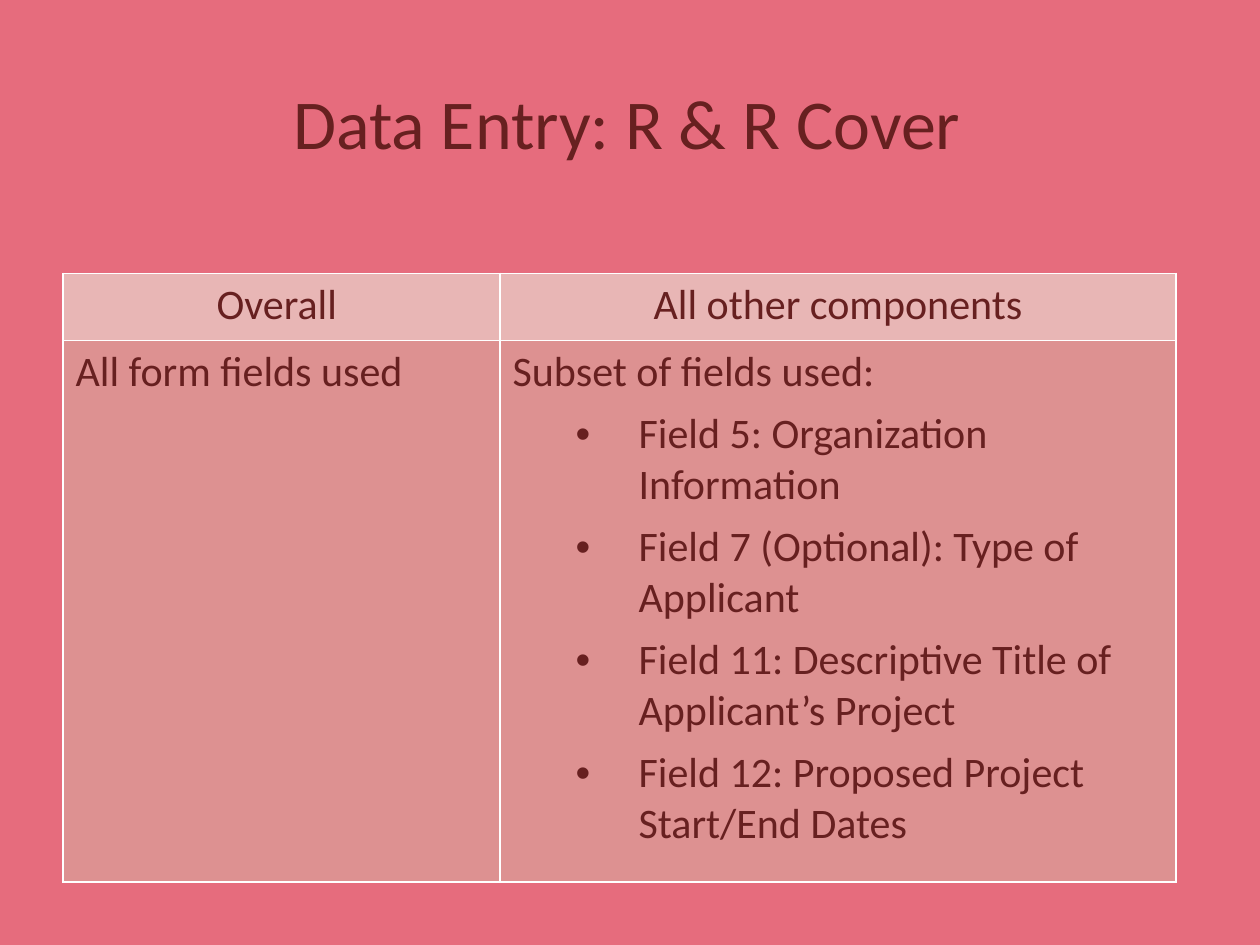
from dataclasses import dataclass

from lxml.etree import SubElement
from pptx import Presentation
from pptx.dml.color import RGBColor
from pptx.enum.text import MSO_AUTO_SIZE as AutoSize, PP_ALIGN as Align
from pptx.oxml.ns import qn
from pptx.slide import Slide
from pptx.table import _Cell as Cell
from pptx.text.text import _Paragraph as Paragraph
from pptx.util import Cm, Pt

COLORS = {
    "background": "E66C7D",
    "text": "672020",
    "header": "E8B6B5",
    "body": "DD9191",
    "border": "FFFFFF",
}
FONT = "Calibri"
COLUMN_WIDTHS = (8.81, 13.63)
ROW_HEIGHTS = (1.35, 10.92)


@dataclass
class Line:
    text: str
    align: Align = Align.LEFT
    space_after: int = 0
    bulleted: bool = False


@dataclass
class CellContent:
    lines: list[Line]
    fill: str


def color(name: str) -> RGBColor:
    return RGBColor.from_string(COLORS[name])


def write_line(paragraph: Paragraph, line: Line, size: int) -> None:
    paragraph.text = line.text
    paragraph.alignment = line.align
    paragraph.space_after = Pt(line.space_after)
    if line.bulleted:
        properties = paragraph._p.get_or_add_pPr()
        properties.set("marL", str(Cm(2.54)))
        properties.set("indent", str(Cm(-1.27)))
        SubElement(properties, qn("a:buFont"), typeface="Arial")
        SubElement(properties, qn("a:buChar"), char="•")
    for run in paragraph.runs:
        run.font.name = FONT
        run.font.size = Pt(size)
        run.font.color.rgb = color("text")


def draw_borders(cell: Cell) -> None:
    properties = cell._tc.get_or_add_tcPr()
    for side in ("lnL", "lnR", "lnT", "lnB"):
        border = SubElement(properties, qn(f"a:{side}"), w=str(Pt(1)))
        fill = SubElement(border, qn("a:solidFill"))
        SubElement(fill, qn("a:srgbClr"), val=COLORS["border"])


def fill_cell(cell: Cell, content: CellContent) -> None:
    draw_borders(cell)
    cell.fill.solid()
    cell.fill.fore_color.rgb = color(content.fill)
    text_frame = cell.text_frame
    for index, line in enumerate(content.lines):
        paragraph = text_frame.add_paragraph() if index else text_frame.paragraphs[0]
        write_line(paragraph, line, 24)


def add_title(slide: Slide, text: str) -> None:
    text_box = slide.shapes.add_textbox(Cm(1.78), Cm(1.47), Cm(21.72), Cm(1.96))
    text_frame = text_box.text_frame
    text_frame.word_wrap = True
    text_frame.auto_size = AutoSize.SHAPE_TO_FIT_TEXT
    write_line(text_frame.paragraphs[0], Line(text, Align.CENTER), 40)


def add_fields_table(slide: Slide, rows: list[list[CellContent]]) -> None:
    table = slide.shapes.add_table(
        len(ROW_HEIGHTS), len(COLUMN_WIDTHS), Cm(1.27), Cm(5.51),
        Cm(sum(COLUMN_WIDTHS)), Cm(sum(ROW_HEIGHTS)),
    ).table
    for column, width in zip(table.columns, COLUMN_WIDTHS):
        column.width = Cm(width)
    for row, height, contents in zip(table.rows, ROW_HEIGHTS, rows):
        row.height = Cm(height)
        for cell, content in zip(row.cells, contents):
            fill_cell(cell, content)


def main() -> None:
    presentation = Presentation()
    presentation.slide_width = Cm(25.4)
    presentation.slide_height = Cm(19.05)
    slide = presentation.slides.add_slide(presentation.slide_layouts[6])
    slide.background.fill.solid()
    slide.background.fill.fore_color.rgb = color("background")

    fields = (
        "Field 5: Organization Information",
        "Field 7 (Optional): Type of Applicant",
        "Field 11: Descriptive Title of Applicant’s Project",
        "Field 12: Proposed Project Start/End Dates",
    )
    subset = [Line("Subset of fields used:", space_after=6)]
    subset += [Line(field, space_after=6, bulleted=True) for field in fields]
    headings = ("Overall ", "All other components")
    add_fields_table(slide, [
        [CellContent([Line(heading, Align.CENTER)], "header") for heading in headings],
        [CellContent([Line("All form fields used")], "body"), CellContent(subset, "body")],
    ])
    add_title(slide, "Data Entry: R & R Cover")
    presentation.save("out.pptx")


if __name__ == "__main__":
    main()
